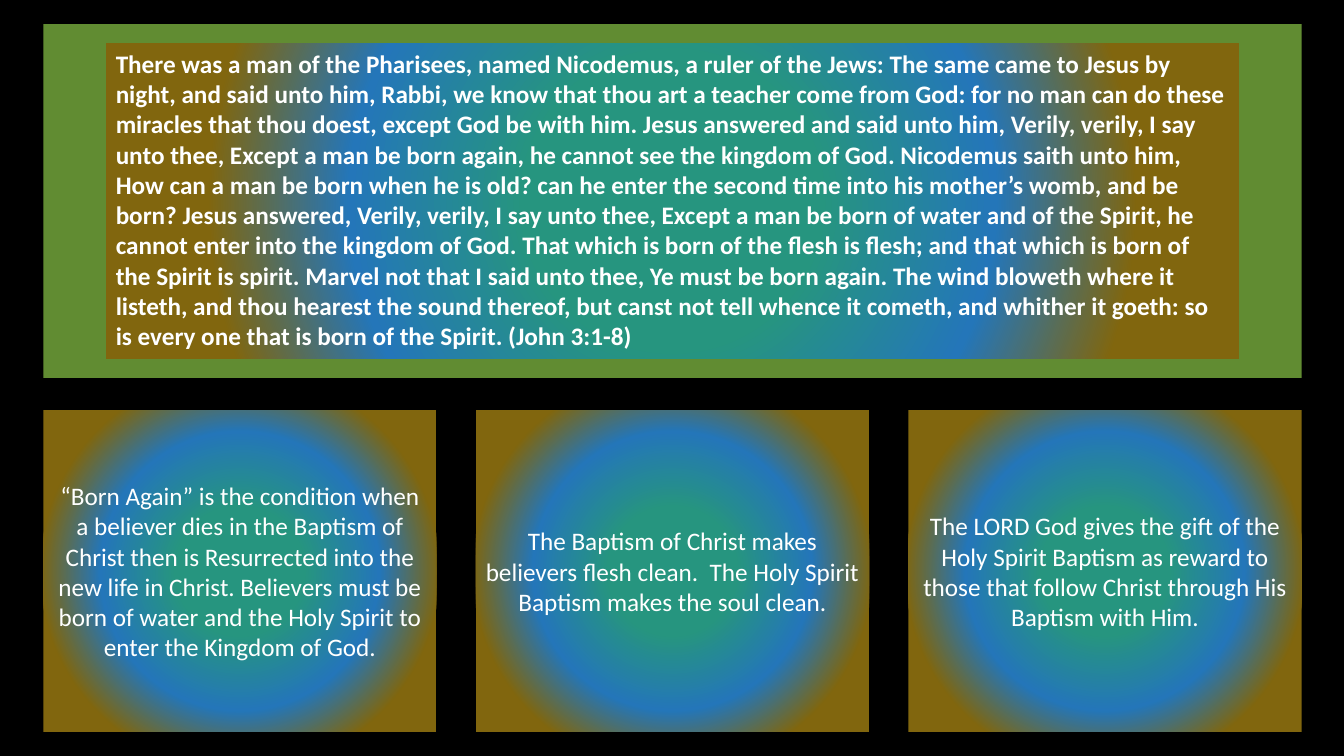
from dataclasses import dataclass
from pptx import Presentation
from pptx.dml.color import RGBColor as RGB
from pptx.enum.shapes import MSO_SHAPE as Shape
from pptx.enum.text import MSO_ANCHOR as Anchor, MSO_AUTO_SIZE as Fit, PP_ALIGN as Align
from pptx.oxml import parse_xml
from pptx.oxml.ns import nsdecls
from pptx.util import Inches, Pt


@dataclass(frozen=True)
class Theme:
    back: str = "000000"
    band: str = "618C32"
    ink: str = "FFFFFF"
    glow: tuple = ((25, "26957F"), (55, "2476B9"), (79, "81660E"))
    font: str = "Calibri"
    size: int = 18


THEME = Theme()

VERSES = (
    "There was a man of the Pharisees, named Nicodemus, a ruler of the Jews:",
    "The same came to Jesus by night, and said unto him, Rabbi, we know that thou art "
    "a teacher come from God: for no man can do these miracles that thou doest, "
    "except God be with him.",
    "Jesus answered and said unto him, Verily, verily, I say unto thee, "
    "Except a man be born again, he cannot see the kingdom of God.",
    "Nicodemus saith unto him, How can a man be born when he is old? can he enter "
    "the second time into his mother’s womb, and be born?",
    "Jesus answered, Verily, verily, I say unto thee, Except a man be born of water "
    "and of the Spirit, he cannot enter into the kingdom of God.",
    "That which is born of the flesh is flesh; and that which is born of the Spirit "
    "is spirit.",
    "Marvel not that I said unto thee, Ye must be born again.",
    "The wind bloweth where it listeth, and thou hearest the sound thereof, but canst "
    "not tell whence it cometh, and whither it goeth: so is every one that is born "
    "of the Spirit. (John 3:1-8)",
)
NOTES = (
    "“Born Again” is the condition when a believer dies in the Baptism of Christ then is "
    "Resurrected into the new life in Christ. Believers must be born of water and the "
    "Holy Spirit to enter the Kingdom of God.",
    "The Baptism of Christ makes believers flesh clean.  The Holy Spirit Baptism makes "
    "the soul clean.",
    "The LORD God gives the gift of the Holy Spirit Baptism as reward to those that "
    "follow Christ through His Baptism with Him.",
)


def add_box(slide, left, top, width, height):
    box = slide.shapes.add_shape(
        Shape.RECTANGLE, Inches(left), Inches(top), Inches(width), Inches(height))
    box.shadow.inherit = False
    box.line.fill.background()
    return box


def add_glow(box):
    stops = "".join(
        f'<a:gs pos="{pos * 1000}"><a:srgbClr val="{tone}"/></a:gs>'
        for pos, tone in THEME.glow)
    grad = parse_xml(
        f'<a:gradFill {nsdecls("a")} rotWithShape="1"><a:gsLst>{stops}</a:gsLst>'
        '<a:path path="circle"><a:fillToRect l="50000" t="50000" r="50000" b="50000"/>'
        '</a:path></a:gradFill>')
    box.fill.background()
    props = box.element.spPr
    props.replace(props.find("a:noFill", {"a": grad.nsmap["a"]}), grad)


def add_text(box, text, align, anchor, bold=False):
    frame = box.text_frame
    frame.word_wrap = True
    frame.vertical_anchor = anchor
    frame.text = text
    para = frame.paragraphs[0]
    para.alignment = align
    font = para.runs[0].font
    font.name, font.size, font.bold = THEME.font, Pt(THEME.size), bold
    font.color.rgb = RGB.from_string(THEME.ink)


def add_verse(slide, left, top, width, height):
    band = add_box(slide, left, top, width, height)
    band.fill.solid()
    band.fill.fore_color.rgb = RGB.from_string(THEME.band)
    side, rim = 0.62, 0.19
    panel = add_box(slide, left + side, top + rim, width - 2 * side, height - 2 * rim)
    add_glow(panel)
    add_text(panel, " ".join(VERSES), Align.LEFT, Anchor.TOP, bold=True)
    panel.text_frame.auto_size = Fit.SHAPE_TO_FIT_TEXT


def add_notes(slide, left, top, width, height):
    wide = 3.9
    step = (width - wide) / (len(NOTES) - 1)
    for i, note in enumerate(NOTES):
        card = add_box(slide, left + i * step, top, wide, height)
        add_glow(card)
        add_text(card, note, Align.CENTER, Anchor.MIDDLE)


def main():
    deck = Presentation()
    deck.slide_width, deck.slide_height = Inches(13.33), Inches(7.5)
    slide = deck.slides.add_slide(deck.slide_layouts[6])
    slide.background.fill.solid()
    slide.background.fill.fore_color.rgb = RGB.from_string(THEME.back)
    add_verse(slide, 0.43, 0.24, 12.48, 3.51)
    add_notes(slide, 0.43, 4.07, 12.48, 3.19)
    deck.save("out.pptx")


if __name__ == "__main__":
    main()
